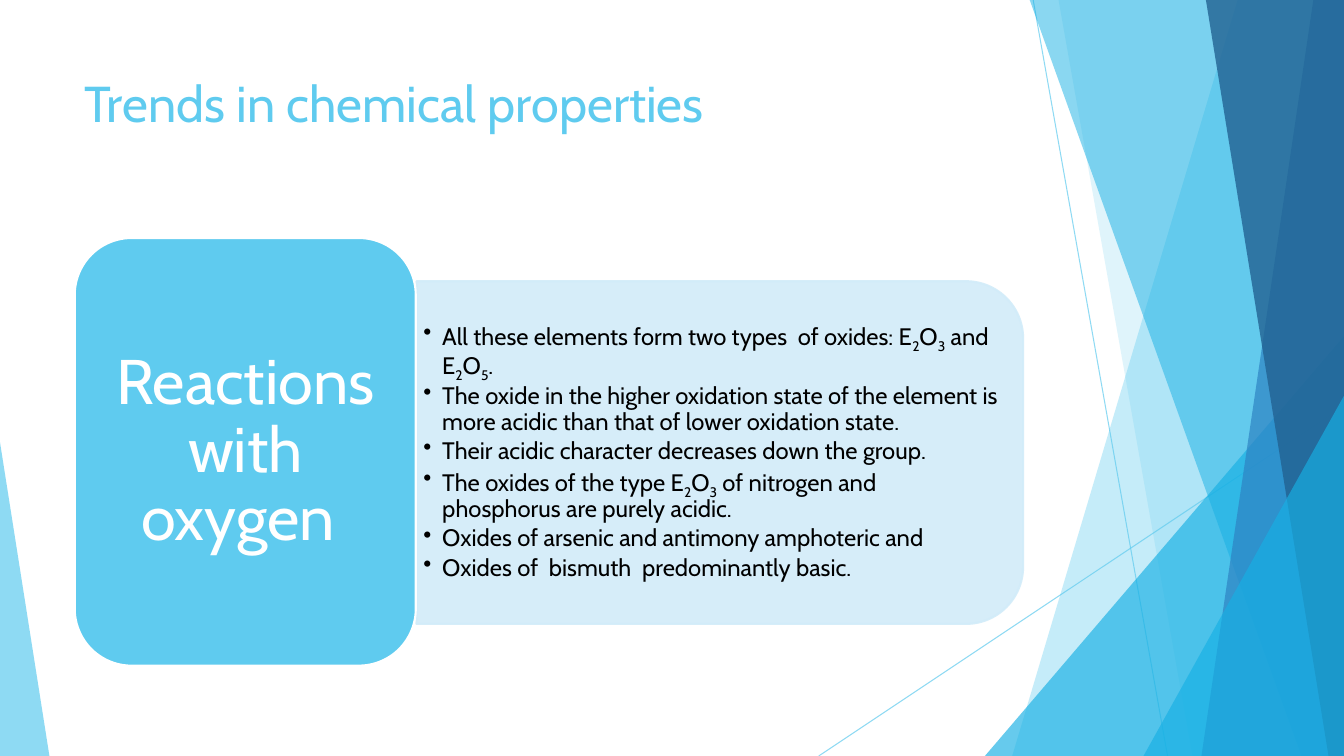
"""Build the slide on trends in chemical properties: reactions with oxygen."""
from pptx import Presentation
from pptx.dml.color import RGBColor
from pptx.enum.shapes import MSO_CONNECTOR, MSO_SHAPE
from pptx.enum.text import MSO_ANCHOR, PP_ALIGN
from pptx.oxml.ns import qn
from pptx.util import Pt
from lxml.etree import SubElement

COLORS = {
    "sky": "5FCBEF",
    "cyan": "17B0E4",
    "blue": "2E83C3",
    "navy": "226292",
    "pale": "D2ECF9",
    "white": "FFFFFF",
    "black": "000000",
}
WIDTH, HEIGHT = 960, 540
TOP = -0.6


def paint(shape, fill, opacity=100, outline=None):
    """Give a shape its fill, outline and opacity, without a shadow."""
    shape.shadow.inherit = False
    shape.fill.solid()
    shape.fill.fore_color.rgb = RGBColor.from_string(COLORS[fill])
    if outline:
        shape.line.color.rgb = RGBColor.from_string(COLORS[outline])
        shape.line.width = Pt(1.5)
    else:
        shape.line.fill.background()
    fade(shape, opacity)


def fade(shape, opacity):
    """Apply an opacity in percent to every colour of a shape."""
    if opacity < 100:
        for color in list(shape.element.spPr.iter(qn("a:srgbClr"))):
            SubElement(color, qn("a:alpha"), val=str(opacity * 1000))


deck = Presentation()
deck.slide_width, deck.slide_height = Pt(WIDTH), Pt(HEIGHT)
page = deck.slides.add_slide(deck.slide_layouts[6])
shapes = page.shapes

for ends in [(738, 0, 834, HEIGHT), (WIDTH, 290, 584.8, HEIGHT)]:
    ray = shapes.add_connector(MSO_CONNECTOR.STRAIGHT, *map(Pt, ends))
    ray.line.color.rgb = RGBColor.from_string(COLORS["sky"])
    ray.line.width = Pt(0.75)
    fade(ray, 70)
    SubElement(ray.element.spPr, qn("a:effectLst"))

facets = [
    ("band", (884.2, 723), "sky", 36),
    ("band", (756, 851.8), "sky", 20),
    ("triangle", (703.5, 240, 256.5, 300, 1), "cyan", 66),
    ("band", (735.3, 929.5), "cyan", 50),
    ("band", (938.2, 858.2), "blue", 70),
    ("band", (861.3, 949), "navy", 80),
    ("triangle", (816.8, 282.7, 143.2, 257.3, 1), "cyan", 66),
    ("triangle", (0, 316, 35.3, 224, 0), "sky", 70),
]
for kind, place, color, opacity in facets:
    if kind == "band":
        upper, lower = place
        outline = shapes.build_freeform(Pt(upper), Pt(TOP), scale=1.0)
        corners = [(WIDTH, TOP), (WIDTH, HEIGHT), (lower, HEIGHT)]
        outline.add_line_segments([(Pt(x), Pt(y)) for x, y in corners], close=True)
        facet = outline.convert_to_shape()
    else:
        *frame, apex = place
        facet = shapes.add_shape(MSO_SHAPE.ISOSCELES_TRIANGLE, *map(Pt, frame))
        facet.adjustments[0] = apex
    paint(facet, color, opacity)

title = shapes.add_textbox(Pt(53.3), Pt(48), Pt(676.8), Pt(104)).text_frame
title.word_wrap = True
heading = title.paragraphs[0]
heading.text = "Trends in chemical properties"
heading.font.name, heading.font.size = "Cabin", Pt(36)
heading.font.color.rgb = RGBColor.from_string(COLORS["sky"])

panel = shapes.add_shape(
    MSO_SHAPE.ROUND_2_SAME_RECTANGLE, Pt(391.7), Pt(106.6), Pt(244.8), Pt(433.4))
panel.rotation = 90
paint(panel, "pale", 90, "pale")

facts = [
    "All these elements form two types  of oxides: E|2|O|3| and E|2|O|5|.",
    "The oxide in the higher oxidation state of the element is more acidic "
    "than that of lower oxidation state.",
    "Their acidic character decreases down the group.",
    "The oxides of the type E|2|O|3| of nitrogen and phosphorus are purely acidic.",
    "Oxides of arsenic and antimony amphoteric and",
    "Oxides of  bismuth  predominantly basic.",
]
box = shapes.add_textbox(Pt(297.4), Pt(212.4), Pt(421.2), Pt(220.3)).text_frame
box.word_wrap = True
box.vertical_anchor = MSO_ANCHOR.MIDDLE
box.margin_left = box.margin_right = Pt(5)
box.margin_top = box.margin_bottom = Pt(2.7)
for index, fact in enumerate(facts):
    para = box.add_paragraph() if index else box.paragraphs[0]
    layout = para._p.get_or_add_pPr()
    layout.set("marL", str(Pt(13.5)))
    layout.set("indent", str(Pt(-13.5)))
    SubElement(layout, qn("a:buChar"), char="•")
    para.line_spacing, para.space_after = 0.9, Pt(2.5)
    para.font.name, para.font.size = "Cabin", Pt(17)
    para.font.color.rgb = RGBColor.from_string(COLORS["black"])
    for part, text in enumerate(fact.split("|")):
        span = para.add_run()
        span.text = text
        if part % 2:
            span._r.get_or_add_rPr().set("baseline", "-25000")

card = shapes.add_shape(
    MSO_SHAPE.ROUNDED_RECTANGLE, Pt(53.4), Pt(170), Pt(243.6), Pt(305.5))
paint(card, "sky", outline="white")
label = card.text_frame
label.word_wrap = True
label.vertical_anchor = MSO_ANCHOR.MIDDLE
label.margin_left = label.margin_right = Pt(13.5)
label.margin_top = label.margin_bottom = Pt(6.75)
topic = label.paragraphs[0]
topic.text = "Reactions with oxygen "
topic.alignment = PP_ALIGN.CENTER
topic.line_spacing = 0.9
topic.font.name, topic.font.size = "Cabin", Pt(45)
topic.font.color.rgb = RGBColor.from_string(COLORS["white"])

deck.save("out.pptx")
